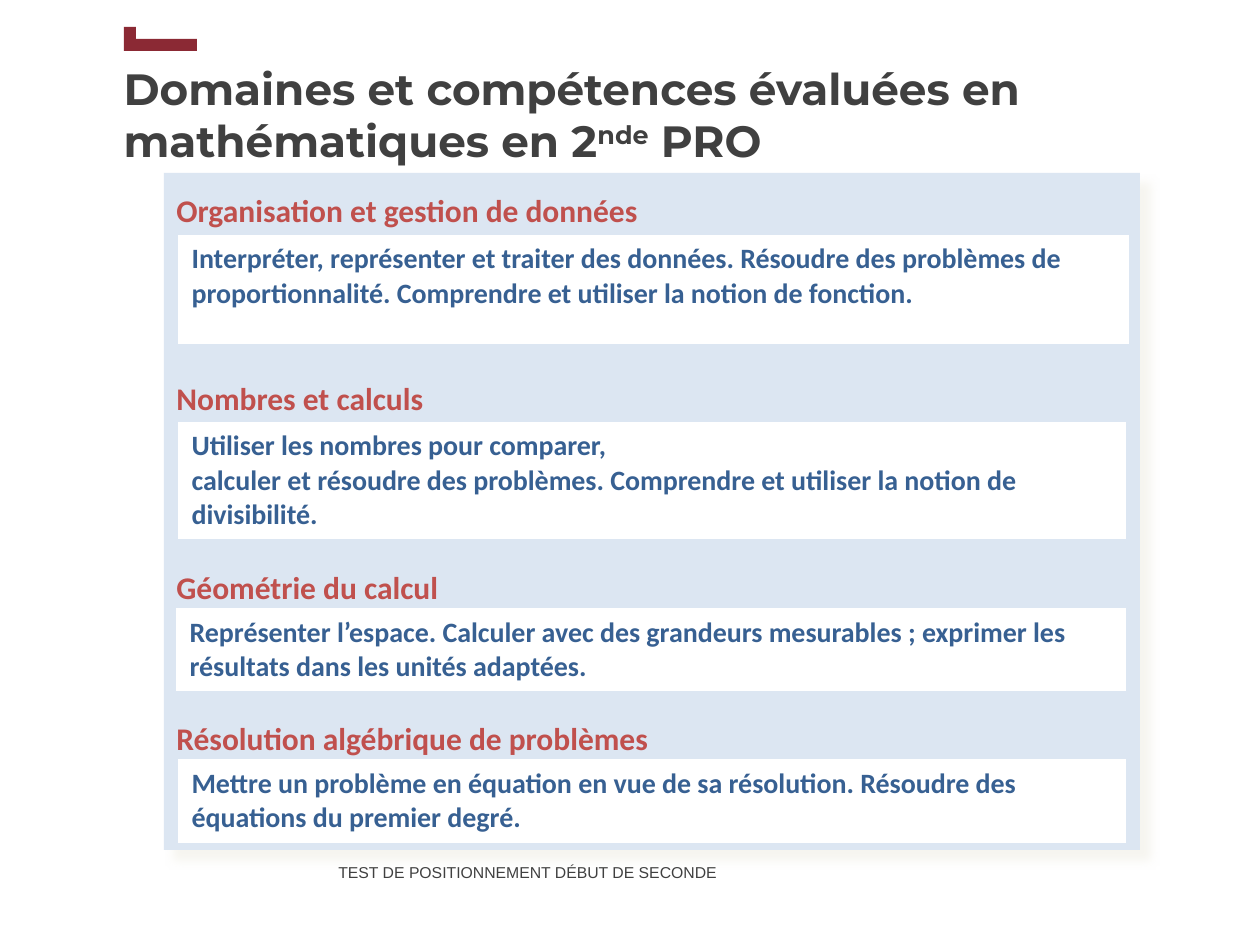
from lxml.etree import SubElement
from pptx import Presentation
from pptx.dml.color import RGBColor as Color
from pptx.enum.shapes import MSO_SHAPE as Preset
from pptx.enum.text import MSO_ANCHOR as Anchor, PP_ALIGN as Align
from pptx.oxml import parse_xml
from pptx.oxml.ns import nsdecls, qn
from pptx.util import Emu, Pt

THEME = {
    "title": {"name": "Montserrat", "size": Pt(25), "bold": True, "color": "404040"},
    "heading": {"name": "Calibri", "size": Pt(18), "bold": True, "color": "C0504D"},
    "body": {"name": "Calibri", "size": Pt(16), "bold": True, "color": "376092"},
    "footer": {"name": "Arial", "size": Pt(9), "bold": False, "color": "404040"},
    "mark": "8B2934",
    "panel": "DCE6F2",
    "shadow": "EEECE1",
    "white": "FFFFFF",
}


def px(*lengths):
    return [Emu(round(length * 914400 / 126)) for length in lengths]


def write(para, text, style):
    span = para.add_run()
    span.text = text
    for key, value in THEME[style].items():
        if key == "color":
            span.font.color.rgb = Color.from_string(value)
        else:
            setattr(span.font, key, value)
    return span


deck = Presentation()
deck.slide_width, deck.slide_height = px(1260, 945)
page = deck.slides.add_slide(deck.slide_layouts[5])

title = page.shapes.title
title.left, title.top, title.width, title.height = px(111, 25, 1086, 178)
title.text_frame.vertical_anchor = Anchor.MIDDLE
para = title.text_frame.paragraphs[0]
para.alignment = Align.LEFT
write(para, "Domaines et compétences évaluées en mathématiques en 2", "title")
ordinal = write(para, "nde", "title")
ordinal.font._element.set("baseline", "30000")
write(para, " PRO", "title")

footer = page.shapes.add_textbox(*px(326, 847, 489, 93))
footer.text_frame.word_wrap = True
footer.text_frame.margin_top = px(12)[0]
para = footer.text_frame.paragraphs[0]
para.line_spacing = Pt(13.2)
write(para, "TEST DE POSITIONNEMENT DÉBUT DE SECONDE", "footer")

mark = page.shapes.add_group_shape()
for place in [(124, 27, 12, 24), (130, 39, 67, 12)]:
    bar = mark.shapes.add_shape(Preset.RECTANGLE, *px(*place))
    bar.shadow.inherit = False
    bar.fill.solid()
    bar.fill.fore_color.rgb = Color.from_string(THEME["mark"])
    bar.line.fill.background()

panel = page.shapes.add_shape(Preset.RECTANGLE, *px(164, 173, 976, 677))
panel.fill.solid()
panel.fill.fore_color.rgb = Color.from_string(THEME["panel"])
panel.line.fill.background()
panel.shadow.inherit = False
effects = panel._element.spPr.find(qn("a:effectLst"))
shadow = SubElement(effects, qn("a:outerShdw"), blurRad=str(Pt(5)),
                    dist=str(Pt(8.5)), dir="2700000", algn="tl", rotWithShape="0")
tint = SubElement(shadow, qn("a:srgbClr"), val=THEME["shadow"])
SubElement(tint, qn("a:alpha"), val="50000")

frame = panel.text_frame
frame.word_wrap = False
frame.vertical_anchor = Anchor.TOP
frame.margin_top = px(18)[0]
headings = [
    ("Organisation et gestion de données", 0),
    ("Nombres et calculs", 86),
    ("Géométrie du calcul", 86),
    ("Résolution algébrique de problèmes", 65),
]
for number, (heading, gap) in enumerate(headings):
    para = frame.add_paragraph() if number else frame.paragraphs[0]
    para.alignment = Align.LEFT
    para.space_before = Pt(gap)
    write(para, heading, "heading")

skills = [
    ((179, 236, 949, 107), ["Interpréter, représenter et traiter des données. Résoudre des problèmes de proportionnalité. Comprendre et utiliser la notion de fonction."]),
    ((179, 423, 946, 115), ["Utiliser les nombres pour comparer,",
                            "calculer et résoudre des problèmes. Comprendre et utiliser la notion de divisibilité."]),
    ((177, 609, 948, 81), ["Représenter l’espace. Calculer avec des grandeurs mesurables ; exprimer les résultats dans les unités adaptées."]),
    ((179, 760, 946, 81), ["Mettre un problème en équation en vue de sa résolution. Résoudre des équations du premier degré."]),
]
for place, lines in skills:
    table = page.shapes.add_table(1, 1, *px(*place)).table
    table.first_row = table.horz_banding = False
    cell = table.cell(0, 0)
    cell.fill.solid()
    cell.fill.fore_color.rgb = Color.from_string(THEME["white"])
    for number, line in enumerate(lines):
        para = cell.text_frame.add_paragraph() if number else cell.text_frame.paragraphs[0]
        write(para, line, "body")

for position, (side, width) in enumerate([("L", 1), ("R", 1), ("T", 1), ("B", 3)]):
    border = parse_xml(
        f'<a:ln{side} {nsdecls("a")} w="{Pt(width)}"><a:solidFill>'
        f'<a:srgbClr val="{THEME["white"]}"/></a:solidFill></a:ln{side}>')
    cell._tc.get_or_add_tcPr().insert(position, border)

deck.save("out.pptx")
